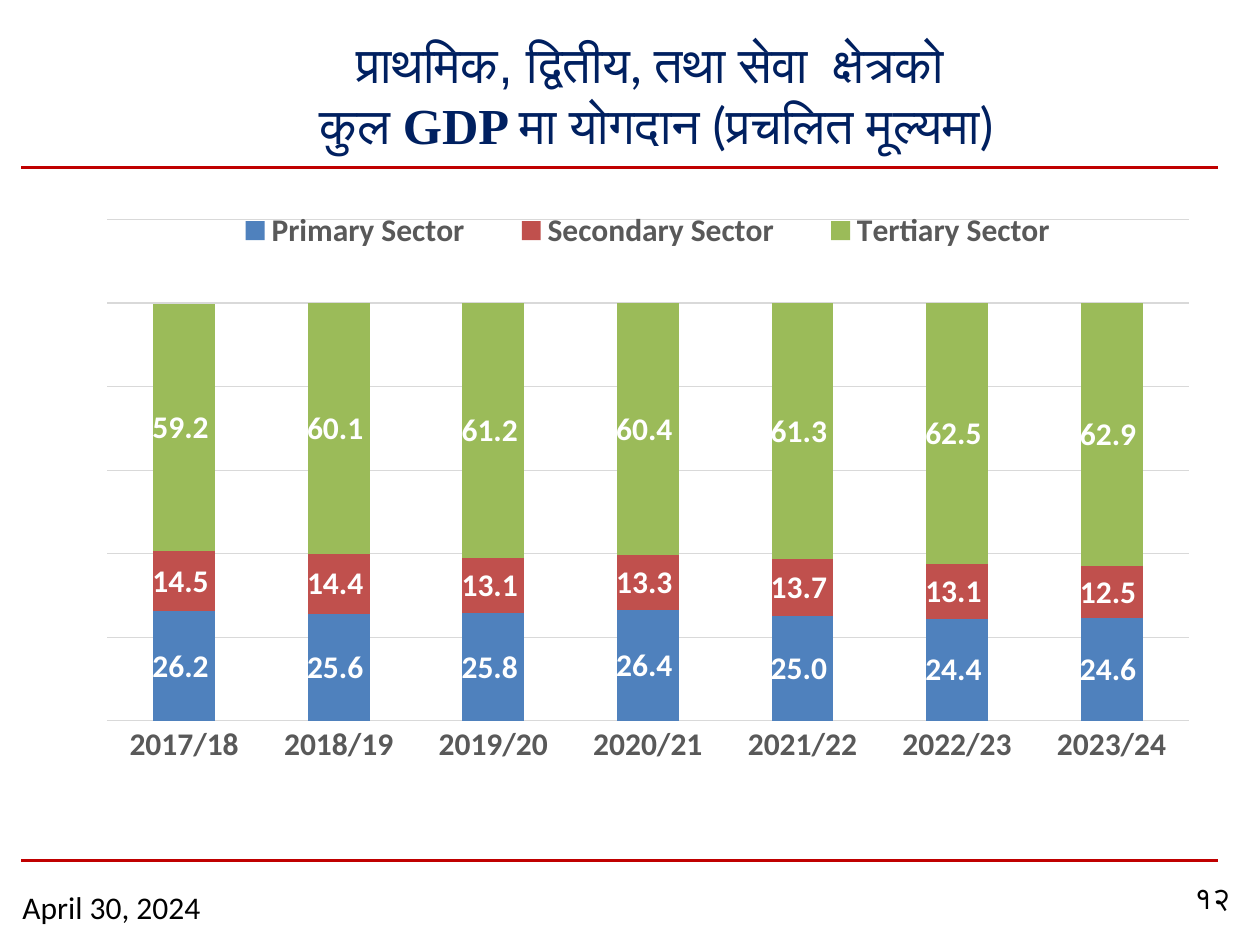
from typing import NamedTuple

from lxml import etree
from pptx import Presentation
from pptx.chart.data import CategoryChartData
from pptx.dml.color import RGBColor
from pptx.enum.chart import XL_CHART_TYPE, XL_LEGEND_POSITION, XL_TICK_MARK
from pptx.enum.shapes import MSO_CONNECTOR
from pptx.enum.text import MSO_ANCHOR, PP_ALIGN
from pptx.oxml.ns import qn
from pptx.util import Inches, Pt

STACKED = XL_CHART_TYPE.COLUMN_STACKED
BOTTOM = XL_LEGEND_POSITION.BOTTOM
NO_TICK = XL_TICK_MARK.NONE
STRAIGHT = MSO_CONNECTOR.STRAIGHT
LEFT, CENTER = PP_ALIGN.LEFT, PP_ALIGN.CENTER
TOP, MIDDLE = MSO_ANCHOR.TOP, MSO_ANCHOR.MIDDLE

NAVY, RED, BLACK, WHITE = "002060", "C00000", "000000", "FFFFFF"
GRAY, GRID = "595959", "D9D9D9"
NUMBER_FORMAT = r"0.0_);[Red]\(0.0\)"


class Box(NamedTuple):
    left: float
    top: float
    width: float
    height: float


class Span(NamedTuple):
    text: str
    font: str
    bold: bool = False


class Sector(NamedTuple):
    name: str
    color: str
    shares: tuple[float, ...]


TITLE_LINES = [
    [
        Span("प्राथमि", "Lato"),
        Span("क, द्वितीय", "Arial"),
        Span(", तथा ", "Lato"),
        Span("सेवा  क्षेत्रको ", "Arial"),
    ],
    [
        Span("कुल ", "Arial"),
        Span("GDP ", "Times New Roman", True),
        Span("मा योगदान (प्रचलित मूल्यमा)", "Lato"),
    ],
]
YEARS = [f"{year}/{year - 1999}" for year in range(2017, 2024)]
SECTORS = [
    Sector("Primary Sector", "4F81BD", (26.2, 25.6, 25.8, 26.4, 25.0, 24.4, 24.6)),
    Sector("Secondary Sector", "C0504D", (14.5, 14.4, 13.1, 13.3, 13.7, 13.1, 12.5)),
    Sector("Tertiary Sector", "9BBB59", (59.2, 60.1, 61.2, 60.4, 61.3, 62.5, 62.9)),
]


def rgb(hex_color: str) -> RGBColor:
    return RGBColor.from_string(hex_color)


def style_font(font, size: float, color: str, name: str, bold: bool = False) -> None:
    font.size = Pt(size)
    font.color.rgb = rgb(color)
    font.name = name
    font.bold = bold


def add_text(slide, box: Box, lines: list[list[Span]], size: float, color: str,
             align=LEFT, anchor=TOP) -> None:
    """Add one paragraph whose lines are parted by line breaks."""
    frame = slide.shapes.add_textbox(*map(Inches, box)).text_frame
    frame.word_wrap = True
    frame.vertical_anchor = anchor
    paragraph = frame.paragraphs[0]
    paragraph.alignment = align
    for index, line in enumerate(lines):
        if index:
            paragraph.add_line_break()
        for span in line:
            run = paragraph.add_run()
            run.text = span.text
            style_font(run.font, size, color, span.font, span.bold)


def add_rule(slide, y: float) -> None:
    rule = slide.shapes.add_connector(
        STRAIGHT, Inches(0.17), Inches(y), Inches(9.67), Inches(y))
    rule.line.color.rgb = rgb(RED)
    rule.line.width = Pt(1.5)
    etree.SubElement(rule._element.spPr, qn("a:effectLst"))


def set_layout(parent, index: int, box: Box, inner: bool = False) -> None:
    """Place a chart part by fractions of the chart's size."""
    for old in parent.findall(qn("c:layout")):
        parent.remove(old)
    layout = etree.Element(qn("c:layout"))
    parent.insert(index, layout)
    manual = etree.SubElement(layout, qn("c:manualLayout"))
    settings = [("layoutTarget", "inner")] if inner else []
    settings += [("xMode", "edge"), ("yMode", "edge")]
    settings += zip("xywh", map(str, box))
    for tag, value in settings:
        etree.SubElement(manual, qn(f"c:{tag}")).set("val", value)


def style_line(line, color: str) -> None:
    line.color.rgb = rgb(color)
    line.width = Pt(0.75)


def add_sector_chart(slide, box: Box) -> None:
    data = CategoryChartData(number_format=NUMBER_FORMAT)
    data.categories = YEARS
    for sector in SECTORS:
        data.add_series(sector.name, sector.shares)
    chart = slide.shapes.add_chart(STACKED, *map(Inches, box), data).chart
    chart.has_title = False
    style_font(chart.font, 18, BLACK, "Calibri")

    year_axis = chart.category_axis
    year_axis.major_tick_mark = NO_TICK
    style_font(year_axis.tick_labels.font, 18, GRAY, "Calibri", True)
    style_line(year_axis.format.line, GRID)

    share_axis = chart.value_axis
    share_axis.minimum_scale = 0
    share_axis.maximum_scale = 120
    share_axis.major_unit = 20
    style_line(share_axis.major_gridlines.format.line, GRID)
    share_axis.visible = False

    plot = chart.plots[0]
    plot.gap_width = 150
    plot.overlap = 100
    plot.vary_by_categories = False
    for series, sector in zip(plot.series, SECTORS):
        series.format.fill.solid()
        series.format.fill.fore_color.rgb = rgb(sector.color)
        labels = series.data_labels
        labels.show_value = True
        labels.number_format = NUMBER_FORMAT
        labels.number_format_is_linked = False
        style_font(labels.font, 18, WHITE, "Calibri", True)

    chart.has_legend = True
    legend = chart.legend
    legend.position = BOTTOM
    legend.include_in_layout = False
    style_font(legend.font, 18, GRAY, "Calibri", True)
    set_layout(legend._element, 1, Box(0.14, 0.03, 0.75, 0.07))
    plot_area = chart._chartSpace.chart.plotArea
    set_layout(plot_area, 0, Box(0.063, 0.048, 0.904, 0.783), inner=True)


def main() -> None:
    prs = Presentation()
    prs.slide_width, prs.slide_height = Inches(10), Inches(7.5)
    slide = prs.slides.add_slide(prs.slide_layouts[6])
    for y in (1.33, 6.83):
        add_rule(slide, y)
    add_text(slide, Box(0.96, 0.23, 8.5, 1.03), TITLE_LINES, 28.8, NAVY, CENTER, MIDDLE)
    add_text(slide, Box(0.08, 7, 2.17, 0.41),
             [[Span("April 30, 2024", "Calibri")]], 18, BLACK)
    add_sector_chart(slide, Box(0.25, 1.5, 9.5, 5.08))
    add_text(slide, Box(9.33, 6.92, 0.58, 0.48), [[Span("१२", "Roboto")]], 18, BLACK, CENTER)
    prs.save("out.pptx")


if __name__ == "__main__":
    main()
